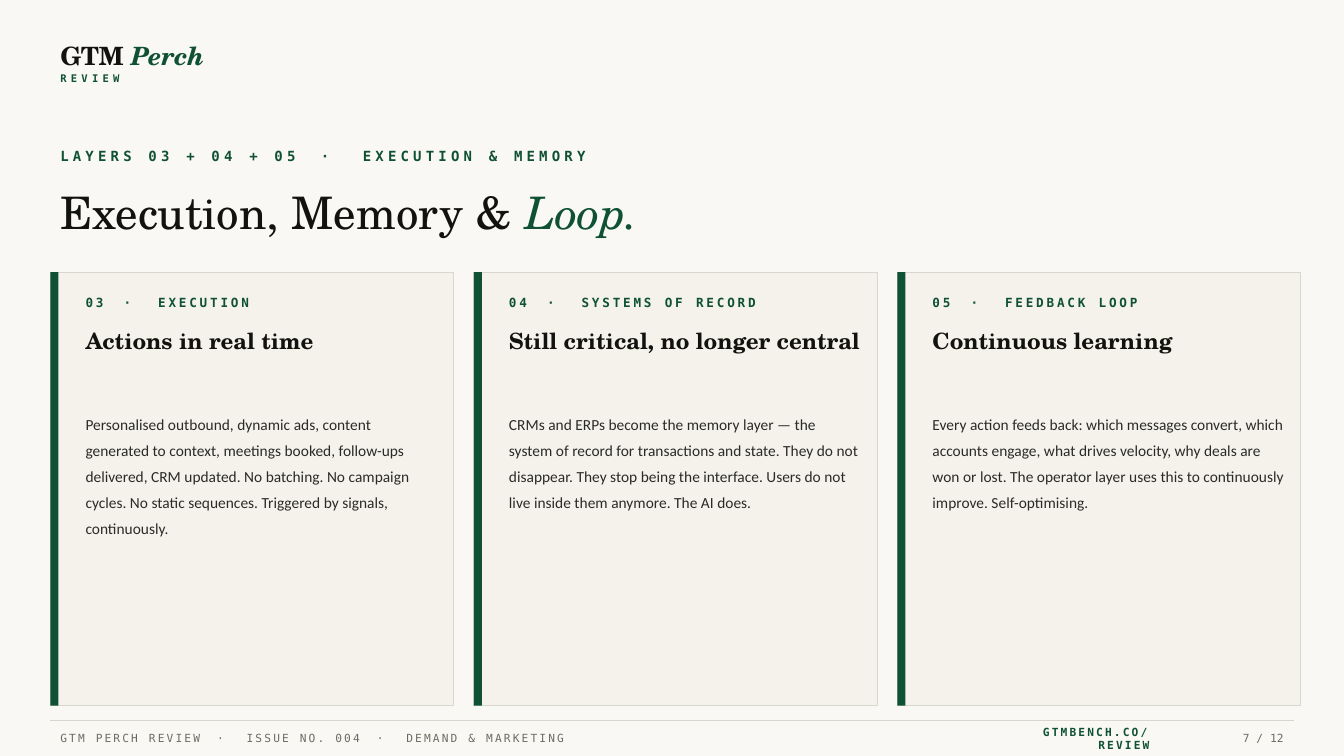
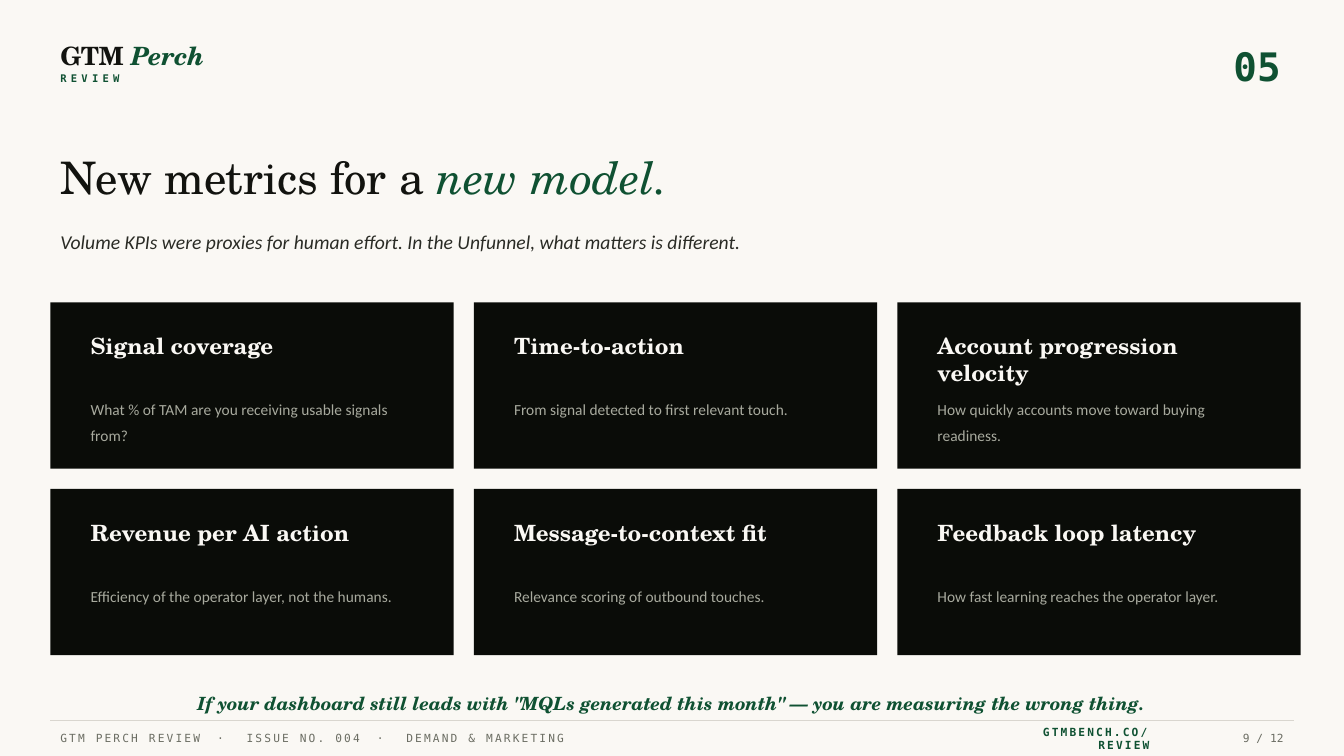
from dataclasses import dataclass, replace

from lxml.etree import SubElement
from pptx import Presentation
from pptx.dml.color import RGBColor
from pptx.enum.shapes import MSO_CONNECTOR, MSO_SHAPE
from pptx.enum.text import MSO_ANCHOR, PP_ALIGN
from pptx.oxml.ns import qn
from pptx.util import Inches, Pt

SERIF = "TeX Gyre Schola"
MONO = "DejaVu Sans Mono"
SANS = "Calibri"
SEPARATOR = " · "


@dataclass(frozen=True)
class Style:
    size: float
    font: str
    color: str
    bold: bool = False
    italic: bool = False
    tracking: float = 0


@dataclass(frozen=True)
class Theme:
    paper: str = "FAF8F4"
    panel: str = "F5F2EC"
    rule: str = "D9D6CF"
    green: str = "0F5132"
    night: str = "0A0C08"
    masthead: Style = Style(18, SERIF, "12130F", bold=True)
    masthead_tag: Style = Style(7.5, MONO, "0F5132", bold=True, tracking=3)
    section_number: Style = Style(28, MONO, "0F5132", bold=True)
    eyebrow: Style = Style(10, MONO, "0F5132", bold=True, tracking=3)
    title: Style = Style(32, SERIF, "12130F")
    subtitle: Style = Style(14, SANS, "2A2B25", italic=True)
    layer_label: Style = Style(9, MONO, "0F5132", bold=True, tracking=2)
    layer_title: Style = Style(16, SERIF, "12130F", bold=True)
    layer_body: Style = Style(11, SANS, "2A2B25")
    metric_title: Style = Style(16, SERIF, "FAF8F4", bold=True)
    metric_body: Style = Style(11, SANS, "A8AA9E")
    takeaway: Style = Style(13, SERIF, "0F5132", bold=True, italic=True)
    footer: Style = Style(8, MONO, "6B6D63", tracking=1.5)
    footer_link: Style = Style(8, MONO, "0F5132", bold=True, tracking=1.5)
    page: Style = Style(8, MONO, "6B6D63")


THEME = Theme()
LEFT = 0.5
RULE_RIGHT = 12.83
CARD_WIDTH = 4
CARD_GAP = 0.2

LAYERS = [
    ("03", "EXECUTION", "Actions in real time",
     "Personalised outbound, dynamic ads, content generated to context, "
     "meetings booked, follow-ups delivered, CRM updated. No batching. "
     "No campaign cycles. No static sequences. Triggered by signals, continuously."),
    ("04", "SYSTEMS OF RECORD", "Still critical, no longer central",
     "CRMs and ERPs become the memory layer — the system of record for "
     "transactions and state. They do not disappear. They stop being the "
     "interface. Users do not live inside them anymore. The AI does."),
    ("05", "FEEDBACK LOOP", "Continuous learning",
     "Every action feeds back: which messages convert, which accounts engage, "
     "what drives velocity, why deals are won or lost. The operator layer uses "
     "this to continuously improve. Self-optimising."),
]

METRICS = [
    ("Signal coverage", "What % of TAM are you receiving usable signals from?"),
    ("Time-to-action", "From signal detected to first relevant touch."),
    ("Account progression velocity", "How quickly accounts move toward buying readiness."),
    ("Revenue per AI action", "Efficiency of the operator layer, not the humans."),
    ("Message-to-context fit", "Relevance scoring of outbound touches."),
    ("Feedback loop latency", "How fast learning reaches the operator layer."),
]


def rgb(color):
    return RGBColor.from_string(color)


def add_run(paragraph, words, style):
    run = paragraph.add_run()
    run.text = words
    run.font.size = Pt(style.size)
    run.font.name = style.font
    run.font.bold = style.bold
    run.font.italic = style.italic
    run.font.color.rgb = rgb(style.color)
    if style.tracking:
        run._r.get_or_add_rPr().set("spc", str(round(style.tracking * 100)))


def add_text(slide, box, runs, align=PP_ALIGN.LEFT, anchor=MSO_ANCHOR.MIDDLE, spacing=None):
    frame = slide.shapes.add_textbox(*map(Inches, box)).text_frame
    frame.word_wrap = True
    frame.vertical_anchor = anchor
    paragraph = frame.paragraphs[0]
    paragraph.alignment = align
    if spacing:
        paragraph.line_spacing = spacing
    for words, style in runs:
        add_run(paragraph, words, style)


def accented(plain, accent, style):
    return [(plain, style), (accent, replace(style, color=THEME.green, italic=True))]


def separated(parts, style):
    glyph = 0.6 * style.size
    wide = replace(style, tracking=(5 * (glyph + style.tracking)) / 3 - glyph)
    runs = [(parts[0], style)]
    for part in parts[1:]:
        runs += [(SEPARATOR, wide), (part, style)]
    return runs


def add_panel(slide, box, fill, outline=None):
    panel = slide.shapes.add_shape(MSO_SHAPE.RECTANGLE, *map(Inches, box))
    panel.shadow.inherit = False
    panel.fill.solid()
    panel.fill.fore_color.rgb = rgb(fill)
    if outline:
        panel.line.color.rgb = rgb(outline)
        panel.line.width = Pt(0.5)
    else:
        panel.line.fill.background()


def add_rule(slide, y):
    rule = slide.shapes.add_connector(
        MSO_CONNECTOR.STRAIGHT, Inches(LEFT), Inches(y), Inches(RULE_RIGHT), Inches(y))
    rule.line.color.rgb = rgb(THEME.rule)
    rule.line.width = Pt(0.75)
    SubElement(rule._element.spPr, qn("a:effectLst"))


def add_title(slide, y, plain, accent):
    add_text(slide, (LEFT, y, 12.3, 0.7), accented(plain, accent, THEME.title))


def add_masthead(slide):
    add_text(slide, (LEFT, 0.35, 3, 0.4), accented("GTM ", "Perch", THEME.masthead))
    add_text(slide, (LEFT, 0.68, 2, 0.2), [("REVIEW", THEME.masthead_tag)])


def add_footer(slide, page):
    add_rule(slide, 7.15)
    issue = ["GTM PERCH REVIEW", "ISSUE NO. 004", "DEMAND & MARKETING"]
    add_text(slide, (LEFT, 7.2, 8, 0.25), separated(issue, THEME.footer))
    add_text(slide, (11.5, 7.2, 1.33, 0.25), [(f"{page} / 12", THEME.page)], PP_ALIGN.RIGHT)
    add_text(slide, (10, 7.2, 1.5, 0.25),
             [("GTMBENCH.CO/REVIEW", THEME.footer_link)], PP_ALIGN.RIGHT)


def card_left(column):
    return LEFT + column * (CARD_WIDTH + CARD_GAP)


def add_layer_card(slide, column, number, label, heading, body):
    x, y, height = card_left(column), 2.7, 4.3
    text_x, text_width = x + 0.25, 3.7
    add_panel(slide, (x, y, CARD_WIDTH, height), THEME.panel, THEME.rule)
    add_panel(slide, (x, y, 0.08, height), THEME.green)
    add_text(slide, (text_x, y + 0.15, text_width, 0.3),
             separated([number, label], THEME.layer_label))
    add_text(slide, (text_x, y + 0.5, text_width, 0.7),
             [(heading, THEME.layer_title)], anchor=MSO_ANCHOR.TOP)
    add_text(slide, (text_x, y + 1.3, text_width, 2.9),
             [(body, THEME.layer_body)], anchor=MSO_ANCHOR.TOP, spacing=1.4)


def add_metric_card(slide, row, column, heading, body):
    height = 1.65
    x, y = card_left(column), 3 + row * (height + CARD_GAP)
    text_x, text_width = x + 0.3, 3.4
    add_panel(slide, (x, y, CARD_WIDTH, height), THEME.night)
    add_text(slide, (text_x, y + 0.25, text_width, 0.6),
             [(heading, THEME.metric_title)], anchor=MSO_ANCHOR.TOP)
    add_text(slide, (text_x, y + 0.85, text_width, 0.7),
             [(body, THEME.metric_body)], anchor=MSO_ANCHOR.TOP, spacing=1.4)


def new_slide(deck, page):
    slide = deck.slides.add_slide(deck.slide_layouts[6])
    slide.background.fill.solid()
    slide.background.fill.fore_color.rgb = rgb(THEME.paper)
    add_masthead(slide)
    add_footer(slide, page)
    return slide


def build_layers(deck):
    slide = new_slide(deck, 7)
    eyebrow = ["LAYERS 03 + 04 + 05", "EXECUTION & MEMORY"]
    add_text(slide, (LEFT, 1.4, 12, 0.3), separated(eyebrow, THEME.eyebrow))
    add_title(slide, 1.75, "Execution, Memory & ", "Loop.")
    for column, layer in enumerate(LAYERS):
        add_layer_card(slide, column, *layer)


def build_metrics(deck):
    slide = new_slide(deck, 9)
    add_text(slide, (11.5, 0.4, 1.3, 0.5), [("05", THEME.section_number)], PP_ALIGN.RIGHT)
    add_title(slide, 1.4, "New metrics for a ", "new model.")
    add_text(slide, (LEFT, 2.2, 12.3, 0.4),
             [("Volume KPIs were proxies for human effort. "
               "In the Unfunnel, what matters is different.", THEME.subtitle)])
    for index, metric in enumerate(METRICS):
        add_metric_card(slide, *divmod(index, 3), *metric)
    add_text(slide, (LEFT, 6.8, 12.3, 0.35),
             [('If your dashboard still leads with "MQLs generated this month" — '
               "you are measuring the wrong thing.", THEME.takeaway)], PP_ALIGN.CENTER)


def main():
    deck = Presentation()
    deck.slide_width = Inches(13.33)
    deck.slide_height = Inches(7.5)
    build_layers(deck)
    build_metrics(deck)
    deck.save("out.pptx")


if __name__ == "__main__":
    main()
